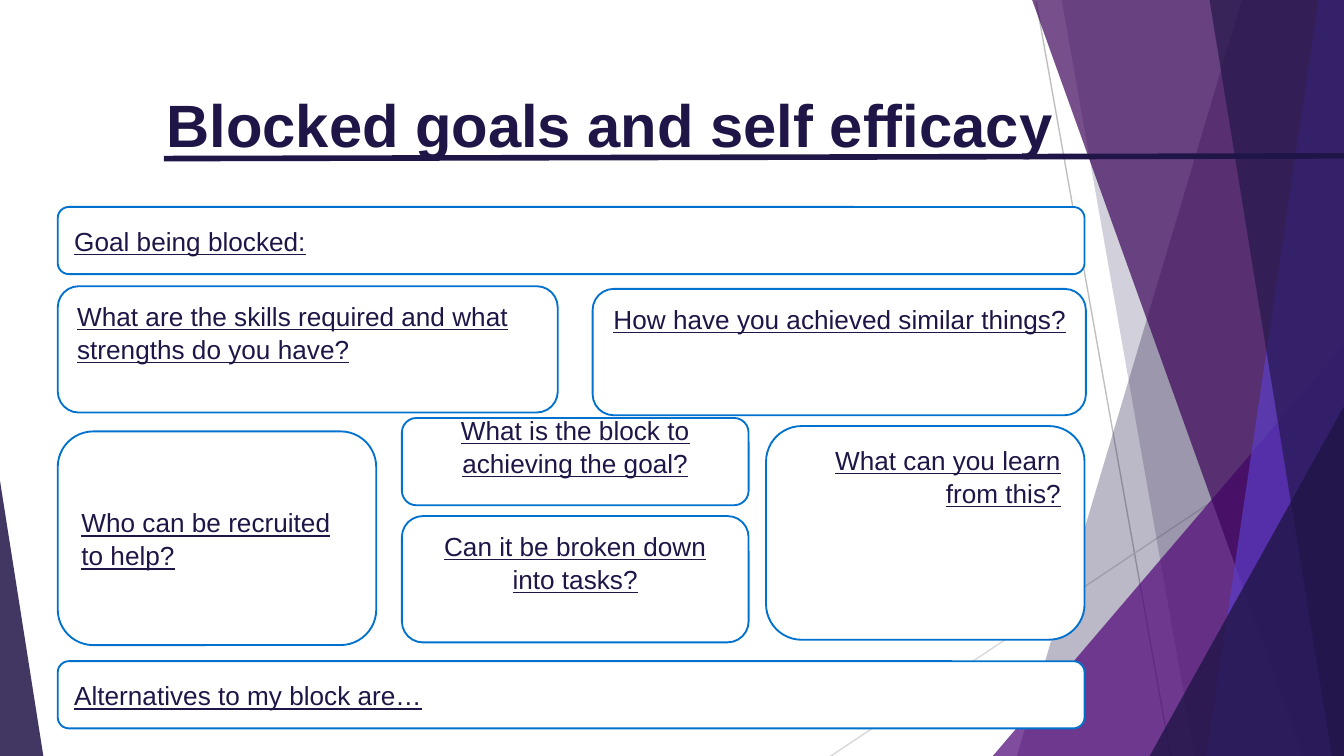
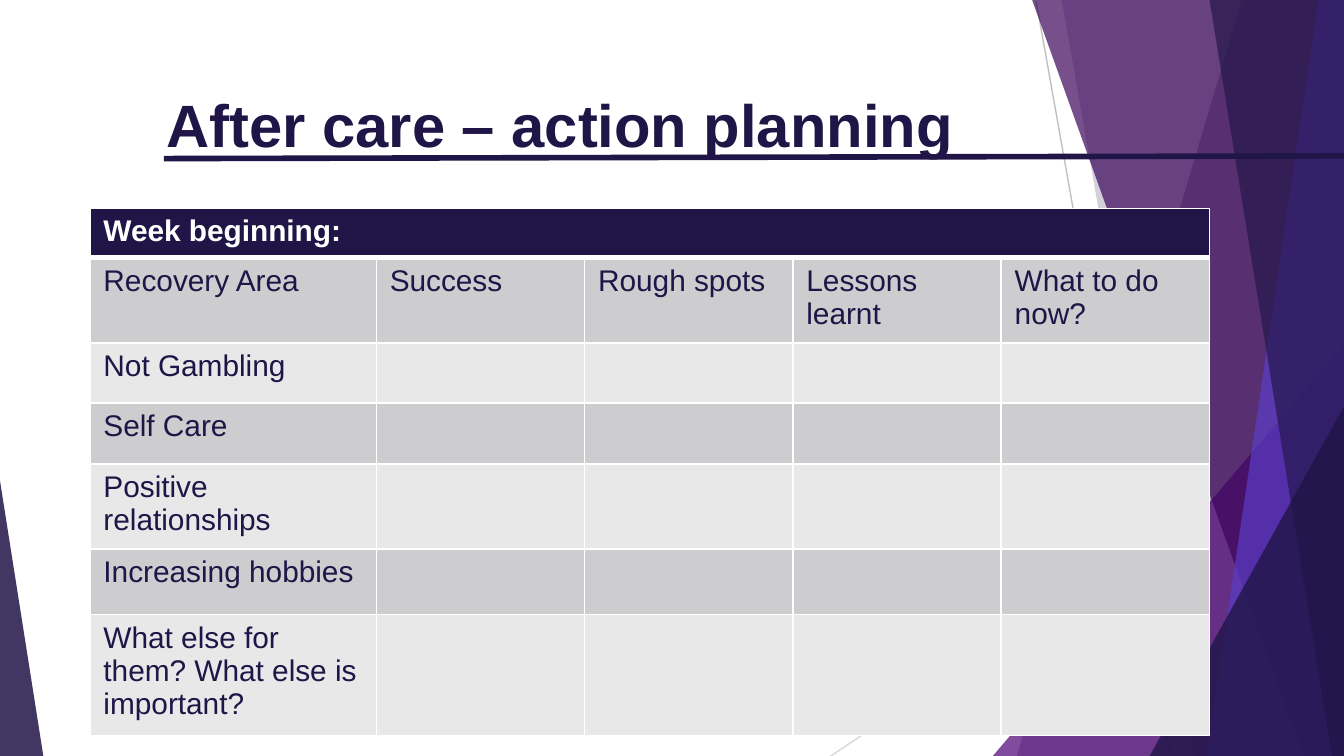
import dataclasses

import pptx
import pptx.dml.color
import pptx.enum.shapes
import pptx.enum.text
import pptx.oxml
import pptx.oxml.ns
import pptx.util
import lxml.etree

SHAPES = pptx.enum.shapes.MSO_SHAPE
ALIGN = pptx.enum.text.PP_ALIGN
ANCHOR = pptx.enum.text.MSO_ANCHOR

COLUMN = ROW = pptx.util.Inches(0.1)
COLUMNS, ROWS = 100, 56.25

NAVY, PURPLE, PLUM, VIOLET = "201547", "500778", "3C055A", "5B3DC6"
BLUE, WHITE = "0072CE", "FFFFFF"
BAND_DARK, BAND_LIGHT = "CDCCCF", "E8E8E9"

TITLE_FONT = {"name": "Arial", "size": pptx.util.Pt(32), "bold": True}
CARD_FONT = {"name": "Arial", "size": pptx.util.Pt(14), "underline": True}
CELL_FONT = {"name": "Arial", "size": pptx.util.Pt(16), "bold": False}
HEADER_FONT = {**CELL_FONT, "bold": True}


@dataclasses.dataclass
class Box:
    left: float
    top: float
    width: float
    height: float

    def region(self, left, top, width, height):
        return Box(self.left + left, self.top + top, width, height)

    def point(self, column, row):
        return round((self.left + column) * COLUMN), round((self.top + row) * ROW)

    def frame(self):
        return (*self.point(0, 0), round(self.width * COLUMN), round(self.height * ROW))


SLIDE = Box(0, 0, COLUMNS, ROWS)


def colour(value):
    return pptx.dml.color.RGBColor.from_string(value)


def apply(target, formats):
    for name, value in formats.items():
        setattr(target, name, value)


def write(paragraph, text, font, ink):
    run = paragraph.add_run()
    run.text = text
    apply(run.font, font)
    run.font.color.rgb = colour(ink)


def paint(shape, fill, opacity=100):
    shape.shadow.inherit = False
    shape.line.fill.background()
    shape.fill.solid()
    shape.fill.fore_color.rgb = colour(fill)
    if opacity < 100:
        tint = shape._element.spPr.find(".//" + pptx.oxml.ns.qn("a:srgbClr"))
        alpha = lxml.etree.SubElement(tint, pptx.oxml.ns.qn("a:alpha"))
        alpha.set("val", str(opacity * 1000))


def add_line(slide, start, end, ink, weight):
    line = slide.shapes.add_connector(
        pptx.enum.shapes.MSO_CONNECTOR.STRAIGHT, *start, *end
    )
    line.line.color.rgb = colour(ink)
    line.line.width = pptx.util.Pt(weight)
    lxml.etree.SubElement(line._element.spPr, pptx.oxml.ns.qn("a:effectLst"))


def add_facet(slide, box, top_left, bottom_left, fill, opacity):
    corners = [(top_left, 0), (box.width, 0), (box.width, box.height),
               (bottom_left, box.height)]
    points = [box.point(*corner) for corner in corners]
    builder = slide.shapes.build_freeform(*points[0])
    builder.add_line_segments(points[1:], close=True)
    paint(builder.convert_to_shape(), fill, opacity)


def add_triangle(slide, box, apex, fill, opacity):
    triangle = slide.shapes.add_shape(SHAPES.ISOSCELES_TRIANGLE, *box.frame())
    triangle.adjustments[0] = apex
    paint(triangle, fill, opacity)


def add_backdrop(slide, box):
    bleed = box.region(0, 0, 100.4, 56.8)
    add_line(slide, box.point(77.1, 0.1), box.point(87.2, 56.8), "BFBFBF", 0.75)
    add_line(slide, box.point(100.4, 30.5), box.point(61, 56.8), "D9D9D9", 0.75)
    add_facet(slide, bleed, 92.4, 75.5, NAVY, 30)
    add_facet(slide, bleed, 79, 89, NAVY, 20)
    add_triangle(slide, box.region(73.4, 25.3, 26.9, 31.5), 1, PURPLE, 72)
    add_facet(slide, bleed, 76.8, 97.2, PLUM, 70)
    add_facet(slide, bleed, 98.1, 89.7, VIOLET, 70)
    add_facet(slide, bleed, 90, 99.2, NAVY, 65)
    add_triangle(slide, box.region(85.3, 29.7, 15, 27), 1, NAVY, 80)
    add_triangle(slide, box.region(-0.4, 33.2, 3.7, 23.5), 0, NAVY, 85)


def add_title(slide, box, text):
    add_line(slide, box.point(0.8, 6.3), box.point(88.6, 6.1), NAVY, 3)
    frame = slide.shapes.add_textbox(*box.frame()).text_frame
    apply(frame, {"word_wrap": True, "margin_top": ROW})
    write(frame.paragraphs[0], text, TITLE_FONT, NAVY)


def add_card(slide, box, text, alignment, anchor, spare_rows=0):
    card = slide.shapes.add_shape(SHAPES.ROUNDED_RECTANGLE, *box.frame())
    paint(card, WHITE)
    card.line.color.rgb = colour(BLUE)
    card.line.width = pptx.util.Pt(1)
    apply(card.text_frame, {
        "word_wrap": True,
        "vertical_anchor": anchor,
        "margin_bottom": round((0.5 + spare_rows) * ROW),
    })
    paragraph = card.text_frame.paragraphs[0]
    apply(paragraph, {"alignment": alignment, "line_spacing": 1.05})
    write(paragraph, text, CARD_FONT, NAVY)


def add_goal_board(slide, box):
    middle, side, half = 25.6, 23.7, 9.4
    cards = [
        ((0, 0, box.width, 5), "Goal being blocked:", ALIGN.LEFT, ANCHOR.MIDDLE),
        ((0, box.height - 5, box.width, 5), "Alternatives to my block are…",
         ALIGN.LEFT, ANCHOR.MIDDLE),
        ((0, 5.9, 37.2, half),
         "What are the skills required and what strengths do you have?",
         ALIGN.LEFT, ANCHOR.TOP),
        ((39.8, 6.1, 36.7, half), "How have you achieved similar things?",
         ALIGN.RIGHT, ANCHOR.TOP),
        ((middle, 15.7, 25.8, 6.5), "What is the block to achieving the goal?",
         ALIGN.CENTER, ANCHOR.MIDDLE, 2.35),
        ((box.width - side, 16.3, side, 15.9), "What can you learn from this?",
         ALIGN.RIGHT, ANCHOR.TOP),
        ((0, 16.7, side, 15.9), "Who can be recruited to help?",
         ALIGN.LEFT, ANCHOR.MIDDLE),
        ((middle, 23, 25.8, half), "Can it be broken down into tasks?",
         ALIGN.CENTER, ANCHOR.TOP),
    ]
    for place, *content in cards:
        add_card(slide, box.region(*place), *content)


def add_cell_borders(cell, weights):
    properties = cell._tc.get_or_add_tcPr()
    for side, weight in weights.items():
        properties.append(pptx.oxml.parse_xml(
            f'<a:ln{side} {pptx.oxml.ns.nsdecls("a")} w="{pptx.util.Pt(weight)}">'
            f'<a:solidFill><a:srgbClr val="{WHITE}"/></a:solidFill></a:ln{side}>'
        ))


def add_plan_table(slide, box):
    row_heights = [3.5, 6.1, 4.5, 4.5, 6.1, 4.9, 8.7]
    column_widths = [21.3] + [15.5] * 4
    texts = [
        ["Week beginning:"],
        ["Recovery Area", "Success", "Rough spots", "Lessons learnt", "What to do now?"],
        ["Not Gambling"],
        ["Self Care"],
        ["Positive relationships"],
        ["Increasing hobbies"],
        ["What else for them? What else is important?"],
    ]
    table = slide.shapes.add_table(
        len(row_heights), len(column_widths), *box.frame()
    ).table
    apply(table, {"first_row": False, "horz_banding": False})
    for column, width in zip(table.columns, column_widths):
        column.width = round(width * COLUMN)
    for row, height in zip(table.rows, row_heights):
        row.height = round(height * ROW)
    table.cell(0, 0).merge(table.cell(0, len(column_widths) - 1))

    for row_index, row_texts in enumerate(texts):
        header = row_index == 0
        fill = NAVY if header else (BAND_DARK if row_index % 2 else BAND_LIGHT)
        weights = {"L": 1, "R": 1, "T": 3 if row_index == 1 else 1,
                   "B": 3 if header else 1}
        for cell in table.rows[row_index].cells:
            add_cell_borders(cell, weights)
            cell.fill.solid()
            cell.fill.fore_color.rgb = colour(fill)
        for column_index, text in enumerate(row_texts):
            paragraph = table.cell(row_index, column_index).text_frame.paragraphs[0]
            write(paragraph, text, HEADER_FONT if header else CELL_FONT,
                  WHITE if header else NAVY)


def add_page(presentation, title, add_content, content_box):
    slide = presentation.slides.add_slide(presentation.slide_layouts[6])
    add_backdrop(slide, SLIDE)
    add_title(slide, SLIDE.region(11.4, 5.5, 68.5, 10.8), title)
    add_content(slide, content_box)


def main():
    presentation = pptx.Presentation()
    apply(presentation, {
        "slide_width": round(COLUMNS * COLUMN),
        "slide_height": round(ROWS * ROW),
    })
    add_page(presentation, "Blocked goals and self efficacy",
             add_goal_board, SLIDE.region(4.3, 15.4, 76.4, 38.8))
    add_page(presentation, "After care – action planning",
             add_plan_table, SLIDE.region(6.7, 15.5, 83.3, 38.3))
    presentation.save("out.pptx")


if __name__ == "__main__":
    main()
